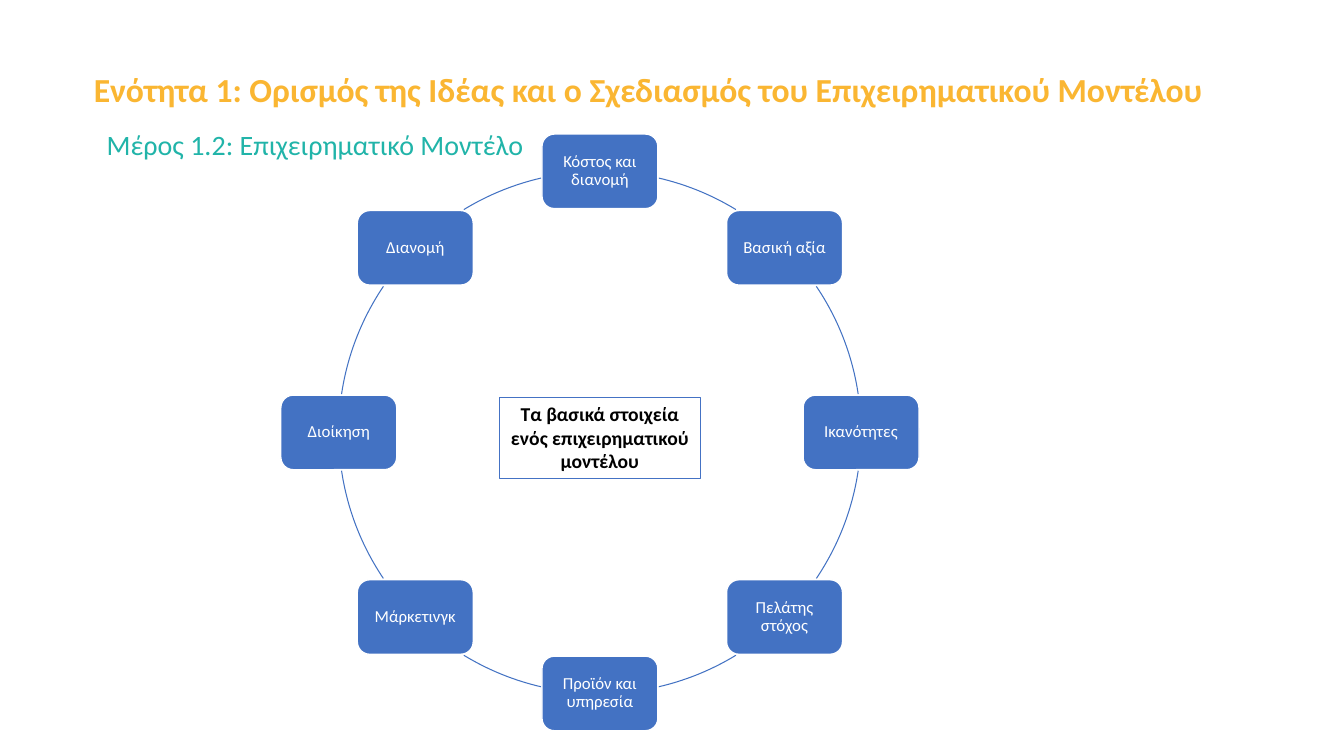
"""Build a slide with the eight elements of a business model in a cycle."""
import math
from dataclasses import dataclass

import pptx
import pptx.dml.color
import pptx.enum.shapes
import pptx.enum.text
import pptx.util

Inches = pptx.util.Inches
Pt = pptx.util.Pt
Align = pptx.enum.text.PP_ALIGN
Anchor = pptx.enum.text.MSO_ANCHOR
Shape = pptx.enum.shapes.MSO_SHAPE

COLORS = {
    "title": "FAB632",
    "subtitle": "21B4A9",
    "node": "4372C3",
    "frame": "4472C4",
    "white": "FFFFFF",
    "black": "000000",
}
FONT = "Calibri"
CENTER_X, CENTER_Y, RADIUS = 5.95, 4.29, 2.59
NODE_W, NODE_H = 1.15, 0.74


@dataclass
class Node:
    """One element of the cycle, at degrees clockwise from the top."""
    text: str
    angle: float


@dataclass
class Arc:
    """One link of the cycle, in degrees clockwise from the top."""
    start: float
    end: float


LABELS = ["Κόστος και διανομή", "Βασική αξία", "Ικανότητες", "Πελάτης στόχος",
          "Προϊόν και υπηρεσία", "Μάρκετινγκ", "Διοίκηση", "Διανομή"]
NODES = [Node(label, i * 360 / len(LABELS)) for i, label in enumerate(LABELS)]
HALF_TURN = [(13, 31.4), (56, 81.6), (98.4, 124), (148.6, 167)]
ARCS = [Arc(a + turn, b + turn) for turn in (0, 180) for a, b in HALF_TURN]


def rgb(name: str) -> pptx.dml.color.RGBColor:
    """Return a named colour."""
    return pptx.dml.color.RGBColor.from_string(COLORS[name])


def place(sp, x: float, y: float, w: float, h: float) -> None:
    """Move and size a shape in inches."""
    sp.left, sp.top, sp.width, sp.height = map(Inches, (x, y, w, h))


def write(sp, text: str, size: float, color: str, bold: bool = False,
          align=Align.LEFT, anchor=Anchor.TOP, inset: float = 0.1,
          spacing: float = 1.0) -> None:
    """Fill a shape with one formatted run."""
    tf = sp.text_frame
    tf.word_wrap = True
    tf.auto_size = pptx.enum.text.MSO_AUTO_SIZE.NONE
    tf.vertical_anchor = anchor
    tf.margin_left = tf.margin_right = Inches(inset)
    tf.margin_top = tf.margin_bottom = Inches(0.05)
    p = tf.paragraphs[0]
    p.alignment, p.line_spacing = align, spacing
    p.space_before = Pt(0)
    r = p.add_run()
    r.text = text
    r.font.name, r.font.size, r.font.bold = FONT, Pt(size), bold
    r.font.color.rgb = rgb(color)


def add_outlined(s, kind, x: float, y: float, w: float, h: float,
                 line: str, width: float):
    """Add an unfilled preset shape with a line and no shadow."""
    sp = s.shapes.add_shape(kind, *map(Inches, (x, y, w, h)))
    sp.shadow.inherit = False
    sp.fill.background()
    sp.line.color.rgb = rgb(line)
    sp.line.width = Pt(width)
    return sp


def add_arc(s, arc: Arc) -> None:
    """Draw one link of the cycle."""
    sp = add_outlined(s, Shape.ARC, CENTER_X - RADIUS, CENTER_Y - RADIUS,
                      2 * RADIUS, 2 * RADIUS, "node", 0.75)
    for i, angle in enumerate((arc.start, arc.end)):
        sp.adjustments[i] = (angle - 90) % 360 * 0.6


def add_node(s, node: Node) -> None:
    """Draw one element of the cycle."""
    turn = math.radians(node.angle)
    x = CENTER_X + RADIUS * math.sin(turn) - NODE_W / 2
    y = CENTER_Y - RADIUS * math.cos(turn) - NODE_H / 2
    sp = add_outlined(s, Shape.ROUNDED_RECTANGLE, x, y, NODE_W, NODE_H, "white", 1)
    sp.fill.solid()
    sp.fill.fore_color.rgb = rgb("node")
    write(sp, node.text, 12, "white", align=Align.CENTER,
          anchor=Anchor.MIDDLE, inset=0.09, spacing=0.9)


def main() -> None:
    """Build and save the slide."""
    prs = pptx.Presentation()
    prs.slide_width, prs.slide_height = Inches(13.33), Inches(7.5)
    s = prs.slides.add_slide(prs.slide_layouts[5])

    title = s.shapes.title
    place(title, 0.83, 0.63, 11.89, 0.5)
    write(title, "Ενότητα 1: Ορισμός της Ιδέας και ο Σχεδιασμός του "
          "Επιχειρηματικού Μοντέλου", 24, "title", bold=True)

    for arc in ARCS:
        add_arc(s, arc)
    for node in NODES:
        add_node(s, node)

    core = add_outlined(s, Shape.RECTANGLE, 4.95, 3.94, 2, 0.81, "frame", 0.75)
    write(core, "Τα βασικά στοιχεία ενός επιχειρηματικού μοντέλου", 14, "black",
          bold=True, align=Align.CENTER)

    subtitle = s.shapes.add_textbox(*map(Inches, (0.96, 1.22, 8.41, 0.44)))
    write(subtitle, "Μέρος 1.2: Επιχειρηματικό Μοντέλο", 20, "subtitle")

    prs.save("out.pptx")


if __name__ == "__main__":
    main()
